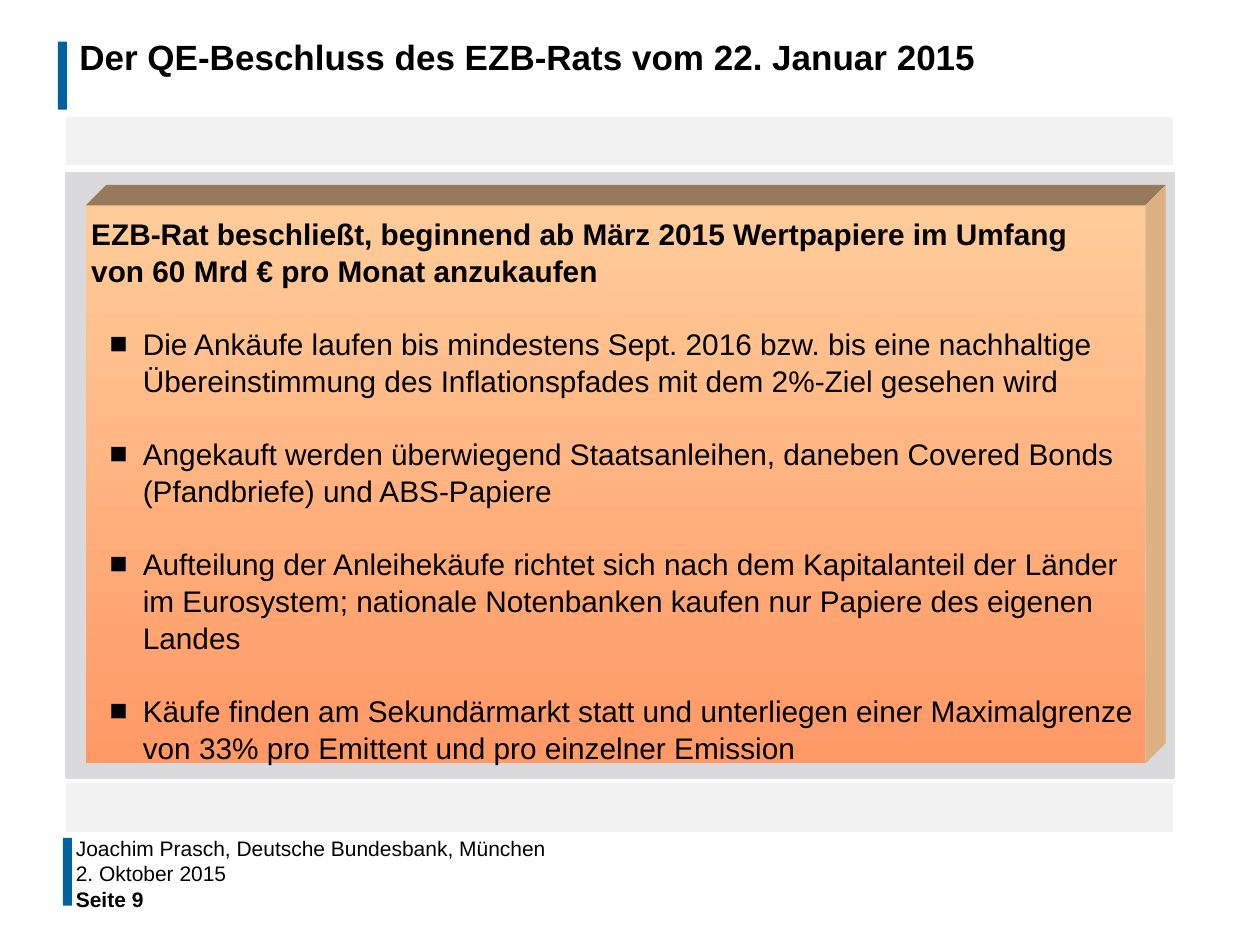
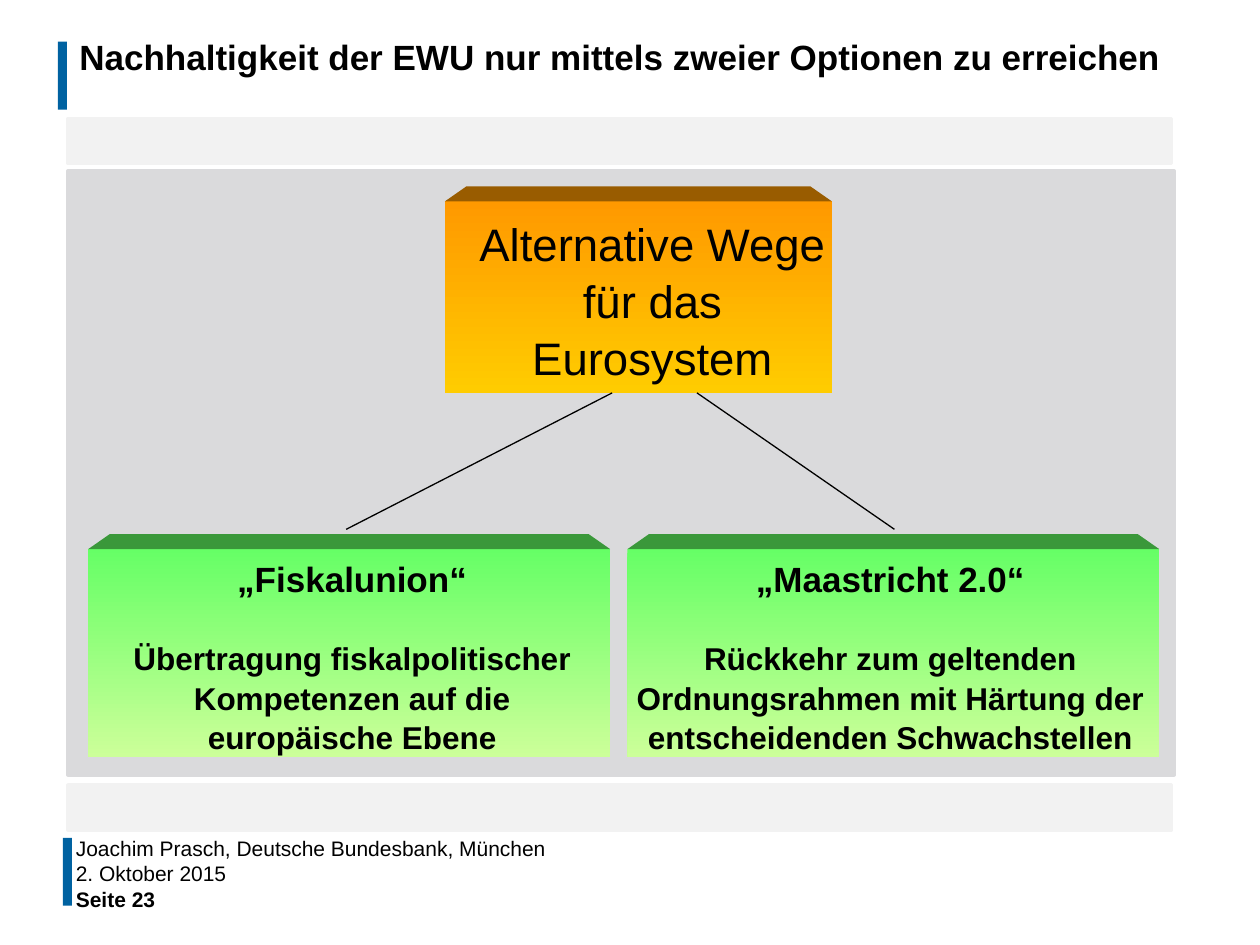
"""Two slides on the ECB's bond purchases and on the options for the monetary union."""
from dataclasses import dataclass

from lxml.etree import SubElement
from pptx import Presentation
from pptx.dml.color import RGBColor
from pptx.enum.shapes import MSO_CONNECTOR as CONN, MSO_SHAPE as SHAPE
from pptx.enum.text import MSO_ANCHOR as ANCHOR, PP_ALIGN as ALIGN
from pptx.oxml.ns import qn
from pptx.util import Cm, Pt


@dataclass(frozen=True)
class Theme:
    font: str = "Arial"
    ink: str = "000000"
    accent: str = "0062A1"
    panel: str = "DADADC"
    band: str = "F2F2F2"
    peach: tuple = ("FFCC99", "FF9966")
    peach_top: str = "967A5B"
    peach_side: str = "DEB183"
    orange: tuple = ("FF9900", "FFCC00")
    orange_top: str = "995C00"
    green: tuple = ("66FF66", "CCFF99")
    green_top: str = "3A983A"
    title: int = 20
    footer: int = 12
    bullet: int = 17
    root: int = 26
    option: int = 18


T = Theme()

FOOTER = ["Joachim Prasch, Deutsche Bundesbank, München", "2. Oktober 2015"]

DECISION = {
    "title": "Der QE-Beschluss des EZB-Rats vom 22. Januar 2015",
    "page": "Seite 9",
    "panel": (1.35, 3.5),
    "lead": ["EZB-Rat beschließt, beginnend ab März 2015 Wertpapiere im Umfang",
             "von 60 Mrd € pro Monat anzukaufen"],
    "bullets": [
        "Die Ankäufe laufen bis mindestens Sept. 2016 bzw. bis eine nachhaltige "
        "Übereinstimmung des Inflationspfades mit dem 2%-Ziel gesehen wird",
        "Angekauft werden überwiegend Staatsanleihen, daneben Covered Bonds "
        "(Pfandbriefe) und ABS-Papiere",
        "Aufteilung der Anleihekäufe richtet sich nach dem Kapitalanteil der Länder "
        "im Eurosystem; nationale Notenbanken kaufen nur Papiere des eigenen Landes",
        "Käufe finden am Sekundärmarkt statt und unterliegen einer Maximalgrenze "
        "von 33% pro Emittent und pro einzelner Emission",
    ],
}

OPTIONS = {
    "title": "Nachhaltigkeit der EWU nur mittels zweier Optionen zu erreichen",
    "page": "Seite 23",
    "panel": (1.37, 3.45),
    "root": "Alternative Wege für das Eurosystem",
    "branches": [
        {"head": "„Fiskalunion“",
         "body": "Übertragung fiskalpolitischer Kompetenzen auf die europäische Ebene",
         "box": (1.78, 10.52), "text": (1.9, 10.4), "line": (12.34, 6.98)},
        {"head": "„Maastricht 2.0“",
         "body": "Rückkehr zum geltenden Ordnungsrahmen mit Härtung der "
                 "entscheidenden Schwachstellen",
         "box": (12.65, 10.72), "text": (12.45, 11.0), "line": (14.05, 18.03)},
    ],
}


def rgb(color):
    return RGBColor.from_string(color)


def paint(sp, color, line=None):
    sp.shadow.inherit = False
    sp.fill.solid()
    sp.fill.fore_color.rgb = rgb(color)
    if line:
        sp.line.color.rgb = rgb(color)
        sp.line.width = Pt(line)
    else:
        sp.line.fill.background()


def rect(s, x, y, w, h, color, line=None):
    sp = s.shapes.add_shape(SHAPE.RECTANGLE, Cm(x), Cm(y), Cm(w), Cm(h))
    paint(sp, color, line)
    return sp


def gradient_box(s, x, y, w, h, colors):
    sp = rect(s, x, y, w, h, colors[0])
    sp.fill.gradient()
    sp.fill.gradient_angle = 270
    for stop, color in zip(sp.fill.gradient_stops, colors):
        stop.color.rgb = rgb(color)


def facet(s, points, color):
    first, *rest = [(Cm(x), Cm(y)) for x, y in points]
    builder = s.shapes.build_freeform(*first)
    builder.add_line_segments(rest)
    paint(builder.convert_to_shape(), color)


def lidded_box(s, x, y, w, h, colors, top, depth=0.3, inset=0.43):
    gradient_box(s, x, y, w, h, colors)
    facet(s, [(x, y), (x + inset, y - depth), (x + w - inset, y - depth), (x + w, y)], top)


def text_box(s, x, y, w, h, inset=(0.25, 0.13)):
    tf = s.shapes.add_textbox(Cm(x), Cm(y), Cm(w), Cm(h)).text_frame
    tf.word_wrap = True
    tf.margin_left = tf.margin_right = Cm(inset[0])
    tf.margin_top = tf.margin_bottom = Cm(inset[1])
    return tf


def write(tf, text, size, bold=False, align=ALIGN.LEFT, spacing=1.0, before=0):
    p = tf.add_paragraph() if tf.text else tf.paragraphs[0]
    p.text = text
    p.alignment = align
    p.line_spacing = spacing
    p.space_before = Pt(before)
    for r in p.runs:
        r.font.name = T.font
        r.font.size = Pt(size)
        r.font.bold = bold
        r.font.color.rgb = rgb(T.ink)
    return p


def indent(p, left, hanging=0, mark=None):
    pPr = p._p.get_or_add_pPr()
    pPr.set("marL", str(Cm(left)))
    pPr.set("indent", str(-Cm(hanging)))
    if mark:
        SubElement(pPr, qn("a:buFont")).set("typeface", T.font)
        SubElement(pPr, qn("a:buChar")).set("char", mark)


def connect(s, x1, y1, x2, y2):
    cn = s.shapes.add_connector(CONN.STRAIGHT, Cm(x1), Cm(y1), Cm(x2), Cm(y2))
    cn.line.color.rgb = rgb(T.ink)
    cn.line.width = Pt(0.75)
    SubElement(cn._element.spPr, qn("a:effectLst"))


def base_slide(prs, data):
    s = prs.slides.add_slide(prs.slide_layouts[6])
    for x, y in ((1.17, 0.84), (1.27, 16.89)):
        rect(s, x, y, 0.18, 1.37, T.accent)
    write(text_box(s, 1.35, 0.71, 23, 1.8), data["title"], T.title, True, spacing=Pt(20.4))
    rect(s, *data["panel"], 22.3, 12.17, T.panel, 2)
    for y in (2.39, 15.82):
        rect(s, 1.37, y, 22.25, 0.91, T.band, 2)
    for i, line in enumerate([*FOOTER, data["page"]]):
        tf = text_box(s, 1.3, 16.87 + i * 0.51, 22.5, 0.46, (0.23, 0.1))
        tf.vertical_anchor = ANCHOR.MIDDLE
        write(tf, line, T.footer, line == data["page"])
    return s


def decision_slide(prs):
    s = base_slide(prs, DECISION)
    x, y, w, h, d = 1.73, 4.14, 21.36, 11.25, 0.41
    right, bottom = x + w, y + h
    gradient_box(s, x, y, w, h, T.peach)
    facet(s, [(x, y), (x + d, y - d), (right + d, y - d), (right, y)], T.peach_top)
    facet(s, [(right, y), (right + d, y - d), (right + d, bottom - d), (right, bottom)],
          T.peach_side)
    tf = text_box(s, 0.66, 4.19, 22.68, 11.13)
    for line in DECISION["lead"]:
        indent(write(tf, line, T.bullet, True, spacing=1.04), 0.93)
    for bullet in DECISION["bullets"]:
        p = write(tf, bullet, T.bullet, spacing=1.04, before=20.4)
        indent(p, 1.97, 0.67, "■")


def options_slide(prs):
    s = base_slide(prs, OPTIONS)
    lidded_box(s, 8.97, 4.06, 7.8, 3.86, T.orange, T.orange_top)
    write(text_box(s, 9.27, 4.19, 7.77, 3.58), OPTIONS["root"], T.root,
          align=ALIGN.CENTER, spacing=1.04)
    y, h = 11.07, 4.19
    for branch in OPTIONS["branches"]:
        x, w = branch["box"]
        lidded_box(s, x, y, w, h, T.green, T.green_top)
        start, end = branch["line"]
        connect(s, start, 7.92, end, 10.67)
        x, w = branch["text"]
        tf = text_box(s, x, y, w, h)
        write(tf, branch["head"], T.title, True, ALIGN.CENTER, 1.05)
        write(tf, branch["body"], T.option, True, ALIGN.CENTER, 1.05, before=21.5)


def main():
    prs = Presentation()
    prs.slide_width, prs.slide_height = Cm(25.4), Cm(19.05)
    decision_slide(prs)
    options_slide(prs)
    prs.save("out.pptx")


if __name__ == "__main__":
    main()
